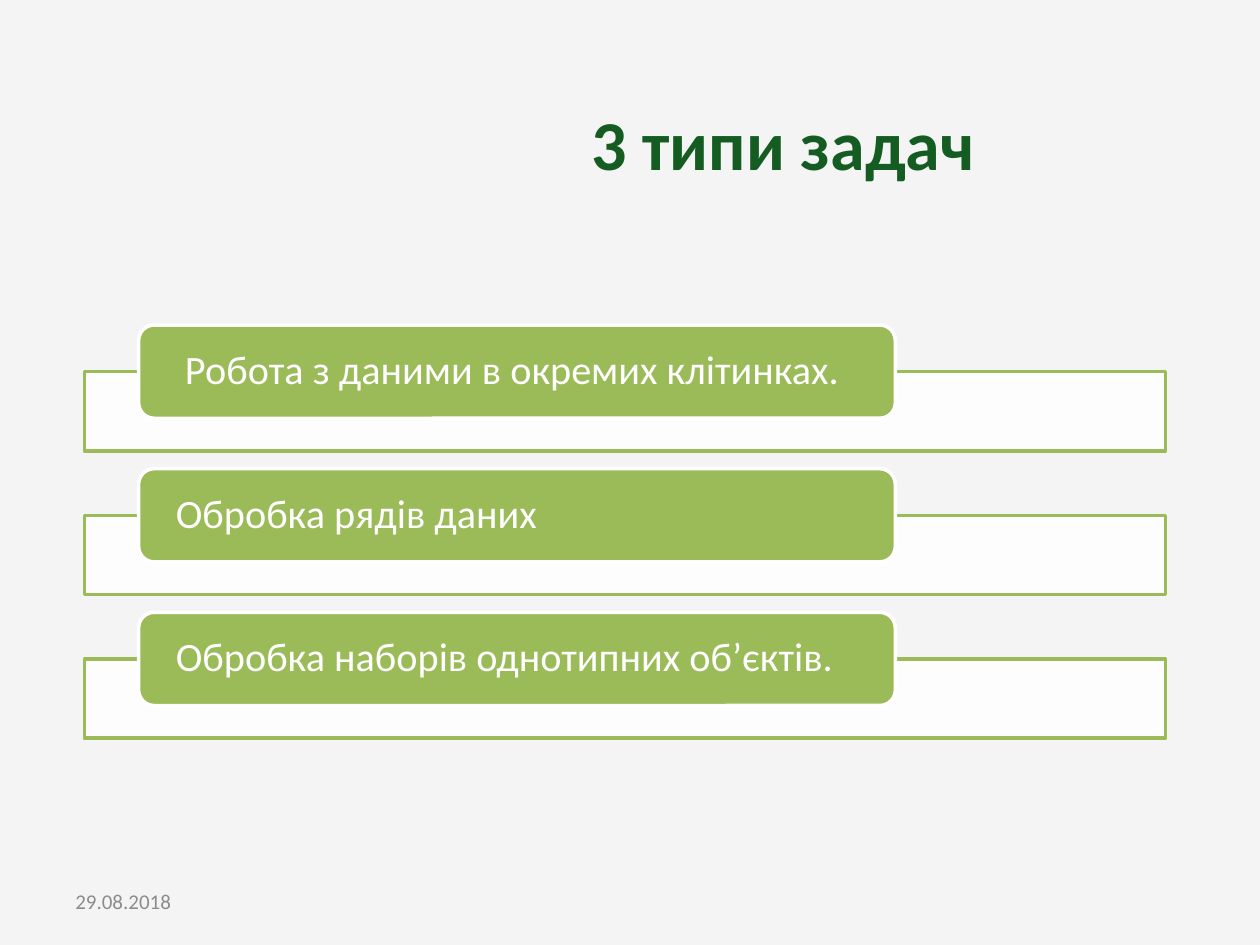
from lxml import etree
from pptx import Presentation
from pptx.dml.color import RGBColor
from pptx.enum.shapes import MSO_SHAPE
from pptx.enum.text import MSO_ANCHOR, MSO_AUTO_SIZE, PP_ALIGN
from pptx.oxml.ns import qn
from pptx.util import Inches, Pt

RECT, ROUND = MSO_SHAPE.RECTANGLE, MSO_SHAPE.ROUNDED_RECTANGLE
MIDDLE = MSO_ANCHOR.MIDDLE
LEFT, CENTER = PP_ALIGN.LEFT, PP_ALIGN.CENTER
FIXED = MSO_AUTO_SIZE.NONE

FONT = "Calibri"
COLORS = {
    "back": "F4F4F4",
    "title": "145C22",
    "date": "8C8C8C",
    "green": "9BBB59",
    "white": "FFFFFF",
}
TASKS = [
    " Робота з даними в окремих клітинках.",
    "Обробка рядів даних",
    "Обробка наборів однотипних об’єктів.",
]


def rgb(name):
    return RGBColor.from_string(COLORS[name])


def write(shape, text, size, color, bold=False, align=LEFT,
          inset=(0.1, 0.05), spacing=1.0):
    frame = shape.text_frame
    frame.word_wrap = True
    frame.auto_size = FIXED
    frame.vertical_anchor = MIDDLE
    frame.margin_left = frame.margin_right = Inches(inset[0])
    frame.margin_top = frame.margin_bottom = Inches(inset[1])
    para = frame.paragraphs[0]
    para.alignment = align
    para.line_spacing = spacing
    run = para.add_run()
    run.text = text
    run.font.name = FONT
    run.font.size = Pt(size)
    run.font.bold = bold
    run.font.color.rgb = rgb(color)


def draw(shapes, kind, box, fill, line, alpha=None):
    """Add a filled, outlined shape; alpha is its opacity in percent."""
    shape = shapes.add_shape(kind, *map(Inches, box))
    shape.shadow.inherit = False
    shape.fill.solid()
    shape.fill.fore_color.rgb = rgb(fill)
    shape.line.color.rgb = rgb(line)
    shape.line.width = Pt(2)
    if alpha is not None:
        tone = shape.fill._xPr.find(qn("a:solidFill"))[0]
        etree.SubElement(tone, qn("a:alpha")).set("val", str(alpha * 1000))
    return shape


def add_title(slide, box):
    title = slide.shapes.title
    title.left, title.top, title.width, title.height = map(Inches, box)
    write(title, "3 типи задач", 40, "title", bold=True, align=CENTER)


def add_date(slide, box):
    date = slide.shapes.add_textbox(*map(Inches, box))
    write(date, "29.08.2018", 12, "date")


def add_tasks(slide, box):
    """Stack one bar with a label on its top edge for each task."""
    left, top, width, height = box
    bar, drop, label = 0.63, 0.37, 0.74
    step = (height - drop - bar) / (len(TASKS) - 1)
    group = slide.shapes.add_group_shape()
    for i, task in enumerate(TASKS):
        y = top + i * step
        draw(group.shapes, RECT, (left, y + drop, width, bar),
             "white", "green", alpha=90)
        pill = draw(group.shapes, ROUND, (left + 0.43, y, width * 0.7, label),
                    "green", "white")
        write(pill, task, 23, "white", inset=(0.26, 0), spacing=0.9)


def main():
    deck = Presentation()
    deck.slide_width, deck.slide_height = Inches(10), Inches(7.5)
    slide = deck.slides.add_slide(deck.slide_layouts[5])
    slide.background.fill.solid()
    slide.background.fill.fore_color.rgb = rgb("back")
    add_title(slide, (3.5, 0, 5.43, 2.26))
    add_date(slide, (0.5, 6.95, 2.33, 0.4))
    add_tasks(slide, (0.67, 2.58, 8.58, 3.28))
    deck.save("out.pptx")


if __name__ == "__main__":
    main()
